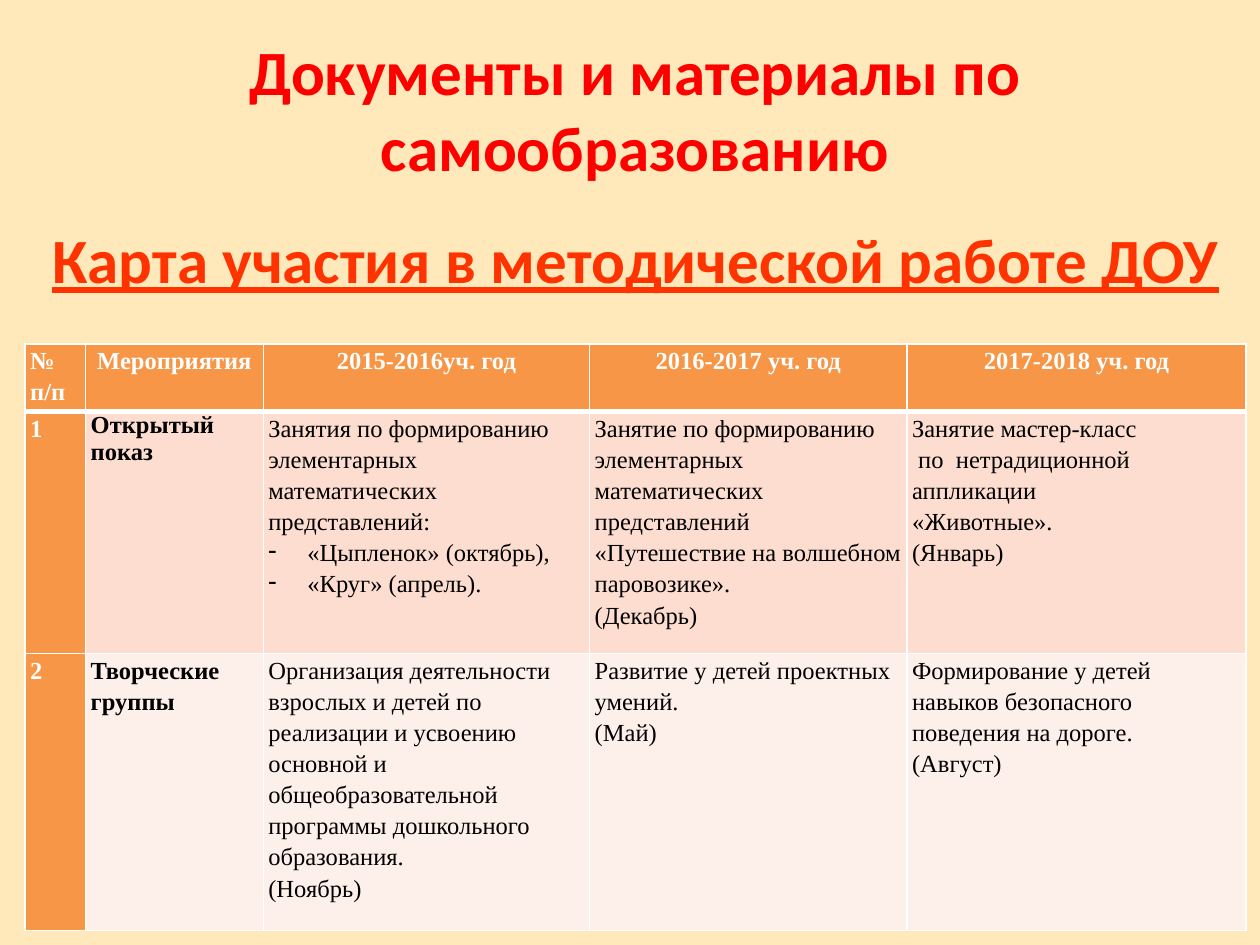
"""Build the slide with the self-education title and the participation table."""
from lxml.etree import SubElement
from pptx import Presentation
from pptx.dml.color import RGBColor
from pptx.enum.text import MSO_ANCHOR, PP_ALIGN
from pptx.oxml.ns import qn
from pptx.util import Inches, Pt

THEME = {
    "background": "FFE8BA", "title": "FF0000", "subtitle": "FF3300",
    "accent": "F79646", "bands": ["FCDDCF", "FDEFE9"],
    "light": "FFFFFF", "dark": "000000",
    "heading_font": "Calibri", "table_font": "Times New Roman",
    "heading_size": 36, "table_size": 14,
}


def write(p, text, color, font, size, bold=True, underline=None):
    r = p.add_run()
    r.text = text
    values = {"name": font, "size": Pt(size), "bold": bold, "underline": underline}
    for name, value in values.items():
        setattr(r.font, name, value)
    r.font.color.rgb = RGBColor.from_string(color)


def add_border(cell, side, width):
    ln = SubElement(cell._tc.get_or_add_tcPr(), qn(f"a:ln{side}"), w=str(Pt(width)))
    fill = SubElement(ln, qn("a:solidFill"))
    SubElement(fill, qn("a:srgbClr"), val=THEME["light"])


prs = Presentation()
prs.slide_width, prs.slide_height = Inches(10), Inches(7.5)
s = prs.slides.add_slide(prs.slide_layouts[5])
s.background.fill.solid()
s.background.fill.fore_color.rgb = RGBColor.from_string(THEME["background"])

title = s.shapes.title
subtitle = s.shapes.add_textbox(0, 0, 0, 0)
headings = [
    (title, (0.67, 0.21, 8.74, 1.31), "Документы и материалы по самообразованию", "title", None),
    (subtitle, (0.28, 1.7, 9.53, 0.71), "Карта участия в методической работе ДОУ", "subtitle", True),
]
for sp, box, text, role, underline in headings:
    for name, value in zip(("left", "top", "width", "height"), box):
        setattr(sp, name, Inches(value))
    tf = sp.text_frame
    tf.word_wrap = True
    tf.vertical_anchor = MSO_ANCHOR.TOP
    p = tf.paragraphs[0]
    p.alignment = PP_ALIGN.CENTER
    write(p, text, THEME[role], THEME["heading_font"], THEME["heading_size"], underline=underline)

rows = [
    [["№ п/п"], ["Мероприятия"], ["2015-2016уч. год"], ["2016-2017 уч. год"], ["2017-2018 уч. год"]],
    [
        ["1"],
        ["Открытый показ"],
        ["Занятия по формированию элементарных математических представлений:",
         "- «Цыпленок» (октябрь),", "- «Круг» (апрель)."],
        ["Занятие по формированию элементарных математических представлений "
         "«Путешествие на волшебном паровозике».", "(Декабрь)"],
        ["Занятие мастер-класс", " по  нетрадиционной аппликации", "«Животные».", "(Январь)"],
    ],
    [
        ["2"],
        ["Творческие группы"],
        ["Организация деятельности взрослых и детей по реализации и усвоению основной и "
         "общеобразовательной программы дошкольного образования.", "(Ноябрь)"],
        ["Развитие у детей проектных умений.", "(Май)"],
        ["Формирование у детей навыков безопасного поведения на дороге.", "(Август)"],
    ],
]
widths = [0.48, 1.41, 2.59, 2.52, 2.69]
heights = [0.53, 1.92, 2.2]
table = s.shapes.add_table(len(rows), len(widths), Inches(0.2), Inches(2.73),
                           Inches(sum(widths)), Inches(sum(heights))).table
table.horz_banding = False
for column, width in zip(table.columns, widths):
    column.width = Inches(width)
for row, height in zip(table.rows, heights):
    row.height = Inches(height)

margins = {"margin_left": 0.04, "margin_right": 0.04, "margin_top": 0, "margin_bottom": 0}
for i, row in enumerate(rows):
    for j, lines in enumerate(row):
        cell = table.cell(i, j)
        for name, value in margins.items():
            setattr(cell, name, Inches(value))
        for side in "LRTB":
            heavy = (i, side) in ((0, "B"), (1, "T"))
            add_border(cell, side, 3 if heavy else 1)
        accented = i == 0 or j == 0
        cell.fill.solid()
        cell.fill.fore_color.rgb = RGBColor.from_string(
            THEME["accent"] if accented else THEME["bands"][i - 1])
        tf = cell.text_frame
        for k, line in enumerate(lines):
            p = tf.add_paragraph() if k else tf.paragraphs[0]
            if line.startswith("- "):
                pPr = p._p.get_or_add_pPr()
                pPr.set("marL", str(Inches(0.31)))
                pPr.set("indent", str(-Inches(0.31)))
                SubElement(pPr, qn("a:buChar"), char="-")
            p.alignment = PP_ALIGN.CENTER if i == 0 and j else PP_ALIGN.LEFT
            p.line_spacing = 1.0 if (i, j) == (1, 1) else 1.15
            write(p, line.removeprefix("- "), THEME["light" if accented else "dark"],
                  THEME["table_font"], THEME["table_size"], bold=accented or j == 1)

prs.save("out.pptx")
